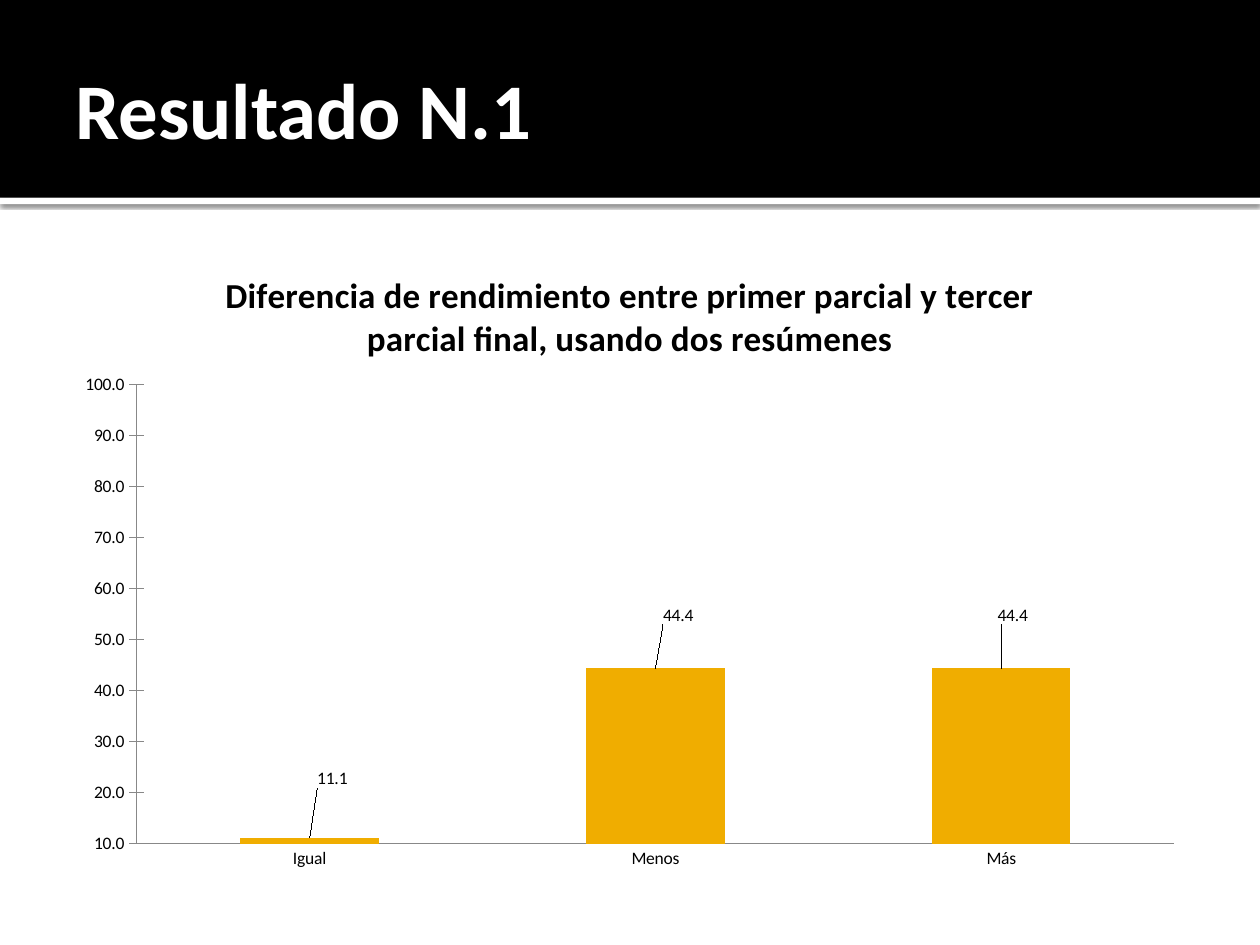
from lxml import etree
from pptx import Presentation
from pptx.chart.data import CategoryChartData
from pptx.dml.color import RGBColor
from pptx.enum.chart import XL_CHART_TYPE, XL_LABEL_POSITION, XL_TICK_MARK
from pptx.enum.shapes import MSO_SHAPE
from pptx.enum.text import MSO_ANCHOR
from pptx.oxml import parse_xml
from pptx.oxml.ns import qn
from pptx.util import Inches, Pt

COLUMN = XL_CHART_TYPE.COLUMN_CLUSTERED
OUTSIDE_END = XL_LABEL_POSITION.OUTSIDE_END
NO_TICK, CROSS = XL_TICK_MARK.NONE, XL_TICK_MARK.CROSS
RECTANGLE, MIDDLE = MSO_SHAPE.RECTANGLE, MSO_ANCHOR.MIDDLE
BLACK = RGBColor(0x00, 0x00, 0x00)
WHITE = RGBColor(0xFF, 0xFF, 0xFF)
GOLD = RGBColor(0xF0, 0xAD, 0x00)
GRAY = RGBColor(0x88, 0x88, 0x88)
FONT = "Calibri"
A_NS = "http://schemas.openxmlformats.org/drawingml/2006/main"


def set_font(font, size, color, bold):
    font.name = FONT
    font.size = Pt(size)
    font.color.rgb = color
    font.bold = bold


def make_layout(**values):
    layout = etree.Element(qn("c:layout"))
    manual = etree.SubElement(layout, qn("c:manualLayout"))
    for name, value in values.items():
        etree.SubElement(manual, qn(f"c:{name}")).set("val", str(value))
    return parse_xml(etree.tostring(layout))


prs = Presentation()
prs.slide_width, prs.slide_height = Inches(10), Inches(7.5)
s = prs.slides.add_slide(prs.slide_layouts[6])

bands = []
for top, height, color in ((1.57, 0.05, WHITE), (0, 1.57, BLACK)):
    sp = s.shapes.add_shape(RECTANGLE, 0, Inches(top), Inches(10), Inches(height))
    sp.shadow.inherit = False
    sp.fill.solid()
    sp.fill.fore_color.rgb = color
    sp.line.fill.background()
    bands.append(sp)

effects = bands[0].element.spPr.find(qn("a:effectLst"))
effects.append(parse_xml(
    f'<a:outerShdw xmlns:a="{A_NS}" blurRad="{Pt(2.5)}" dist="{Pt(0.8)}" dir="5400000" '
    'algn="t" rotWithShape="0"><a:srgbClr val="000000"><a:alpha val="60000"/>'
    '</a:srgbClr></a:outerShdw>'))

title = s.shapes.add_textbox(Inches(0.5), Inches(0.17), Inches(9), Inches(1.37))
tf = title.text_frame
tf.word_wrap = True
tf.vertical_anchor = MIDDLE
tf.margin_left = Inches(0.1)
tf.margin_right = tf.margin_top = tf.margin_bottom = Inches(0.05)
r = tf.paragraphs[0].add_run()
r.text = "Resultado N.1"
set_font(r.font, 45, WHITE, True)

data = CategoryChartData(number_format="0.0")
data.categories = ["Igual", "Menos", "Más"]
data.add_series("Series 1", (11.1, 44.4, 44.4))
chart = s.shapes.add_chart(
    COLUMN, Inches(0.5), Inches(1.94), Inches(9), Inches(5.06), data).chart
set_font(chart.font, 10, BLACK, False)
chart.has_legend = False
chart.has_title = True
p = chart.chart_title.text_frame.paragraphs[0]
r = p.add_run()
r.text = ("Diferencia de rendimiento entre primer parcial y tercer "
          "parcial final, usando dos resúmenes")
set_font(r.font, 20, BLACK, True)

for axis, tick in ((chart.category_axis, NO_TICK), (chart.value_axis, CROSS)):
    axis.major_tick_mark = tick
    axis.minor_tick_mark = NO_TICK
    axis.has_major_gridlines = False
    axis.format.line.color.rgb = GRAY
    axis.format.line.width = Pt(0.75)
value_axis = chart.value_axis
value_axis.minimum_scale, value_axis.maximum_scale = 10, 100
value_axis.major_unit = 10
value_axis.tick_labels.number_format = "0.0"
value_axis.tick_labels.number_format_is_linked = False

plot = chart.plots[0]
plot.gap_width = 150
plot.vary_by_categories = False
series = plot.series[0]
series.format.fill.solid()
series.format.fill.fore_color.rgb = GOLD
labels = series.data_labels
labels.show_value = True
labels.number_format = "0.0"
labels.number_format_is_linked = False
for i in range(3):
    series.points[i].data_label.position = OUTSIDE_END

offsets = ((0.02, -0.07), (0.02, -0.06), (0.01, -0.06))
for label, (x, y) in zip(chart.element.iter(qn("c:dLbl")), offsets):
    label.find(qn("c:idx")).addnext(make_layout(x=x, y=y))

plot_area = chart.element.find(f".//{qn('c:plotArea')}")
for old in plot_area.findall(qn("c:layout")):
    plot_area.remove(old)
plot_area.insert(0, make_layout(
    layoutTarget="inner", xMode="edge", yMode="edge", x=0.065, y=0.22, w=0.915, h=0.72))

prs.save("out.pptx")
